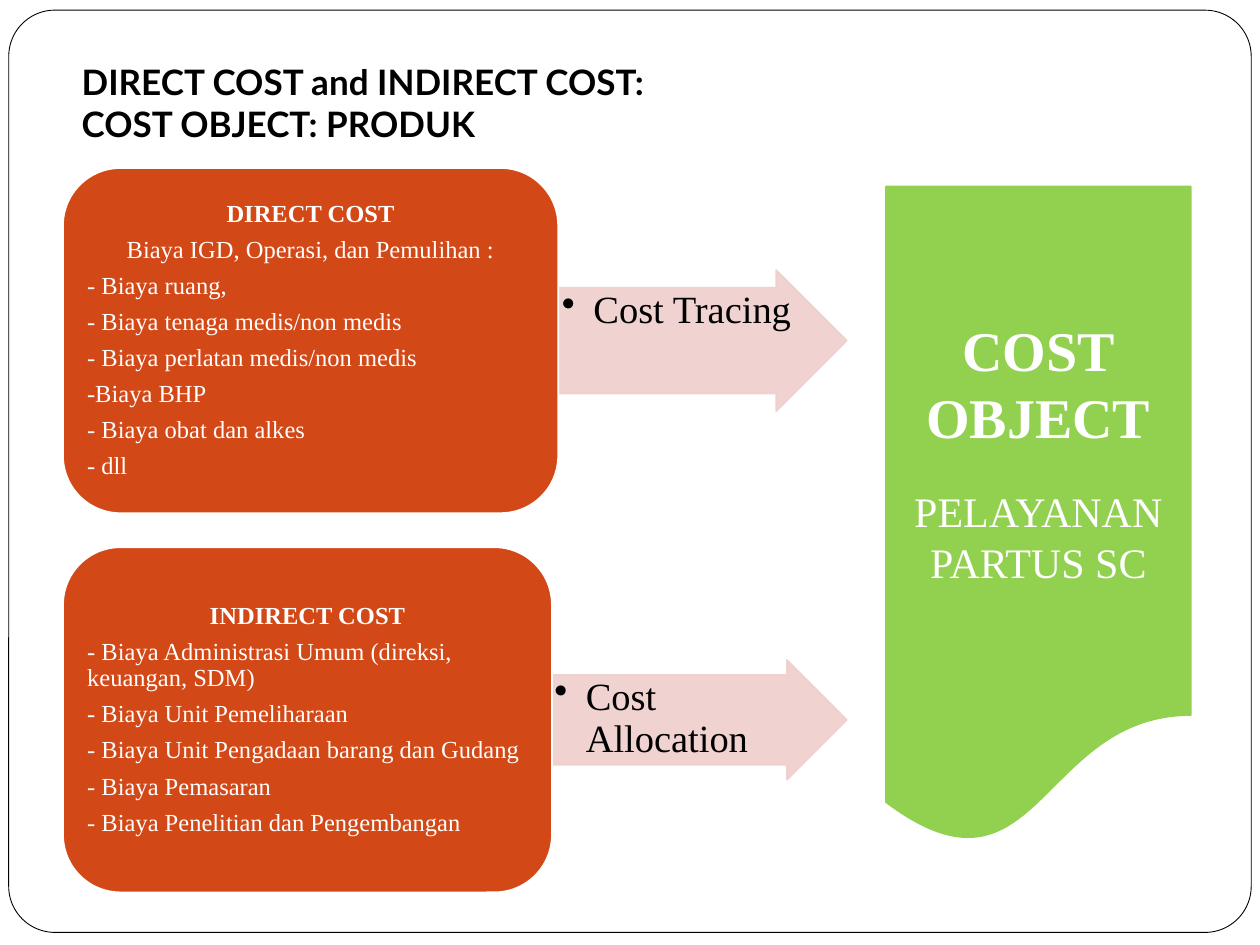
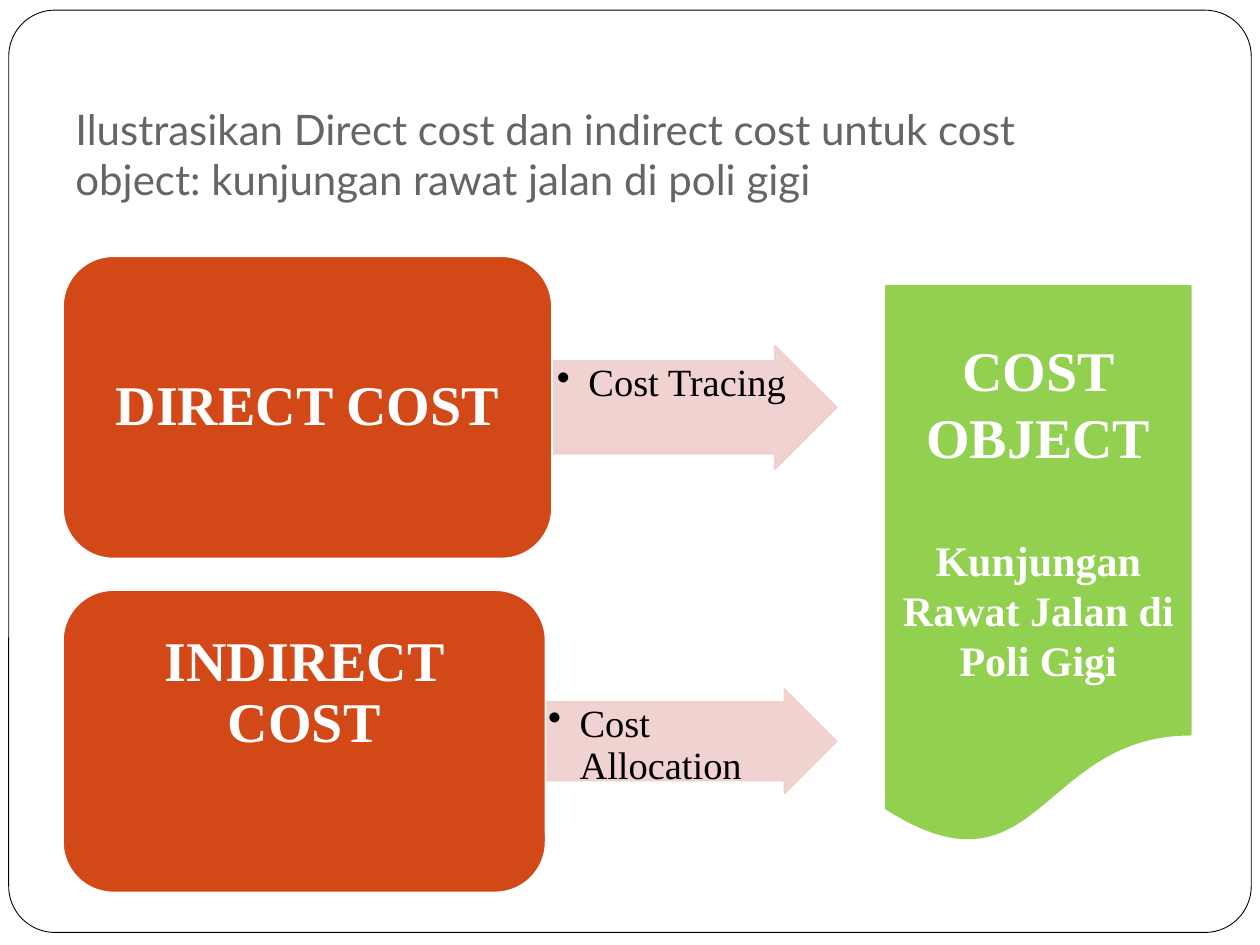
from lxml import etree
from pptx import Presentation
from pptx.dml.color import RGBColor
from pptx.enum import shapes, text
from pptx.oxml.ns import qn
from pptx.util import Pt

COLORS = {
    "white": "FFFFFF", "black": "000000", "grey": "696464",
    "cost": "D34817", "arrow": "EFCFCC", "object": "92D050",
}
TITLE_FONT, BODY_FONT = "Lato", "Times New Roman"
LEFT, CENTER = text.PP_ALIGN.LEFT, text.PP_ALIGN.CENTER
MARGIN, BOX_BOTTOM = 36, 510
OBJECT_LEFT, OBJECT_WIDTH, OBJECT_BOTTOM = 506.2, 174.2, 483.2

SLIDES = [
    {
        "title": "DIRECT COST and INDIRECT COST:\nCOST OBJECT: PRODUK",
        "title_box": (39.6, 29.5, 588, 60.5),
        "title_style": (20, "black", True),
        "box_height": 197.3, "box_gap": 19.4, "box_size": 14, "arrow_right": 483.9,
        "costs": [
            {
                "width": 283, "arrow_height": 80.6, "arrow_text": "Cost Tracing",
                "arrow_align": CENTER, "lift": 0,
                "heading": "DIRECT COST",
                "intro": ["Biaya IGD, Operasi, dan Pemulihan :"],
                "items": ["- Biaya ruang,", "- Biaya tenaga medis/non medis",
                          "- Biaya perlatan medis/non medis", "-Biaya BHP",
                          "- Biaya obat dan alkes", "- dll"],
            },
            {
                "width": 279.4, "arrow_height": 68.4, "arrow_text": "Cost Allocation",
                "arrow_align": LEFT, "lift": 0,
                "heading": "INDIRECT COST",
                "intro": [],
                "items": ["- Biaya Administrasi Umum (direksi, keuangan, SDM)",
                          "- Biaya Unit Pemeliharaan",
                          "- Biaya Unit Pengadaan barang dan Gudang",
                          "- Biaya Pemasaran", "- Biaya Penelitian dan Pengembangan"],
            },
        ],
        "object": "PELAYANAN PARTUS SC", "object_bold": False,
        "object_top": 106.6, "object_gap": 20.7,
    },
    {
        "title": "Ilustrasikan Direct cost dan indirect cost untuk cost object: "
                 "kunjungan rawat jalan di poli gigi",
        "title_box": (36, 21.6, 628, 102.2),
        "title_style": (24, "grey", False),
        "box_height": 172.8, "box_gap": 18, "box_size": 32, "arrow_right": 478.1,
        "costs": [
            {
                "width": 279.4, "arrow_height": 70.6, "arrow_text": "Cost Tracing",
                "arrow_align": CENTER, "lift": 0,
                "heading": "DIRECT COST", "intro": [], "items": [],
            },
            {
                "width": 275.8, "arrow_height": 59.8, "arrow_text": "Cost Allocation",
                "arrow_align": LEFT, "lift": 54,
                "heading": "INDIRECT COST", "intro": [], "items": [],
            },
        ],
        "object": "Kunjungan Rawat Jalan di Poli Gigi", "object_bold": True,
        "object_top": 163.4, "object_gap": 36.8,
    },
]


def add_block(slide, kind, bounds, fill, line, line_width=1):
    shape = slide.shapes.add_shape(kind, *[Pt(value) for value in bounds])
    shape.shadow.inherit = False
    shape.fill.solid()
    shape.fill.fore_color.rgb = RGBColor.from_string(COLORS[fill])
    shape.line.color.rgb = RGBColor.from_string(COLORS[line])
    shape.line.width = Pt(line_width)
    return shape


def write(shape, lines, font, color, anchor, insets=(7.2, 3.6, 7.2, 3.6)):
    """Fill a shape with (text, size, bold, alignment) lines; return its paragraphs."""
    frame = shape.text_frame
    frame.word_wrap = True
    frame.vertical_anchor = anchor
    frame.margin_left, frame.margin_top, frame.margin_right, frame.margin_bottom = [
        Pt(inset) for inset in insets]
    paragraphs = []
    for content, size, bold, alignment in lines:
        paragraph = frame.add_paragraph() if paragraphs else frame.paragraphs[0]
        paragraph.text = content
        paragraph.alignment = alignment
        paragraph.font.name = font
        paragraph.font.size = Pt(size)
        paragraph.font.bold = bold
        paragraph.font.color.rgb = RGBColor.from_string(COLORS[color])
        paragraphs.append(paragraph)
    return paragraphs


presentation = Presentation()
presentation.slide_width, presentation.slide_height = Pt(720), Pt(540)
MIDDLE, TOP = text.MSO_ANCHOR.MIDDLE, text.MSO_ANCHOR.TOP

for content in SLIDES:
    slide = presentation.slides.add_slide(presentation.slide_layouts[6])
    frame = add_block(slide, shapes.MSO_SHAPE.ROUNDED_RECTANGLE,
                      (5, 5.8, 710, 527), "white", "black", 0.5)
    frame.adjustments[0] = 0.05

    title = slide.shapes.add_textbox(*[Pt(value) for value in content["title_box"]])
    size, color, bold = content["title_style"]
    write(title, [(content["title"], size, bold, LEFT)], TITLE_FONT, color,
          text.MSO_ANCHOR.BOTTOM, (7.2, 3.6, 7.2, 7.2))

    height, size = content["box_height"], content["box_size"]
    for row, cost in enumerate(content["costs"]):
        top = BOX_BOTTOM - height - (1 - row) * (height + content["box_gap"])
        box_right = MARGIN + cost["width"]

        arrow_top = top + (height - cost["arrow_height"]) / 2
        arrow = add_block(slide, shapes.MSO_SHAPE.RIGHT_ARROW,
                          (box_right, arrow_top, content["arrow_right"] - box_right,
                           cost["arrow_height"]), "arrow", "arrow")
        arrow.adjustments[0] = 0.75
        for color_element in arrow._element.spPr.iter(qn("a:srgbClr")):
            etree.SubElement(color_element, qn("a:alpha"), val="90000")
        label = write(arrow, [(cost["arrow_text"], 22, False, cost["arrow_align"])],
                      BODY_FONT, "black", TOP, (1.4, 1.4, 1, 1.4))[0]
        label.line_spacing = 0.9
        properties = label._p.get_or_add_pPr()
        properties.set("marL", str(Pt(18)))
        properties.set("indent", str(Pt(-18)))
        bullet = etree.Element(qn("a:buChar"), char="•")
        properties.find(qn("a:defRPr")).addprevious(bullet)

        box = add_block(slide, shapes.MSO_SHAPE.ROUNDED_RECTANGLE,
                        (MARGIN, top, cost["width"], height), "cost", "white")
        lines = [(cost["heading"], size, True, CENTER)]
        lines += [(intro, size, False, CENTER) for intro in cost["intro"]]
        lines += [(item, size, False, LEFT) for item in cost["items"]]
        side, edge = size * 0.3, size * 0.15
        for paragraph in write(box, lines, BODY_FONT, "white", MIDDLE,
                               (side, edge, side, edge + cost["lift"])):
            paragraph.line_spacing = 0.9
            paragraph.space_after = Pt(size * 0.39)

    cost_object = add_block(slide, shapes.MSO_SHAPE.FLOWCHART_DOCUMENT,
                            (OBJECT_LEFT, content["object_top"], OBJECT_WIDTH,
                             OBJECT_BOTTOM - content["object_top"]), "object", "object")
    heading, name = write(cost_object,
                          [("COST OBJECT", 32, True, CENTER),
                           (content["object"], 24, content["object_bold"], CENTER)],
                          BODY_FONT, "white", MIDDLE)
    name.space_before = Pt(content["object_gap"])

presentation.save("out.pptx")
